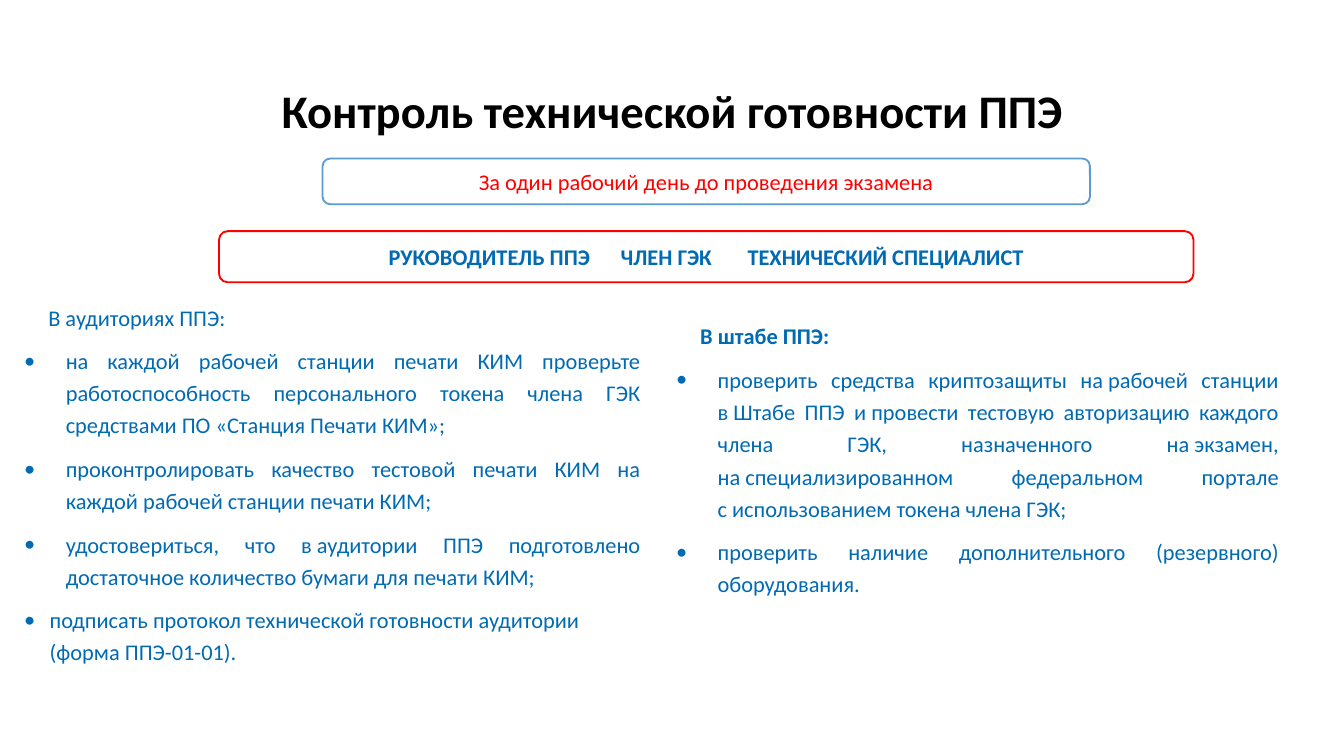
import pptx
import pptx.util
import pptx.dml.color
import pptx.enum.shapes
import pptx.enum.text
import lxml.etree

PX = 9144  # EMU per px, 100 px to the inch
FONT = "Calibri"
HARD = chr(160)  # no-break space, typed as ~ in the texts
HUES = {"ink": "000000", "blue": "006AB3", "red": "FF0000",
        "edge": "5B9BD5", "white": "FFFFFF"}
ALIGN = pptx.enum.text.PP_ALIGN
MID = pptx.enum.text.MSO_ANCHOR.MIDDLE
TOP = pptx.enum.text.MSO_ANCHOR.TOP


def hue(name):
    return pptx.dml.color.RGBColor.from_string(HUES[name])


def add(parent, tag, **attrs):
    return lxml.etree.SubElement(parent, pptx.oxml.ns.qn(tag), **attrs)


def mark(para, left=0, hang=0, dot=False, tab=None):
    """Set the indents, the bullet and the tab stop of a paragraph."""
    props = para._p.get_or_add_pPr()
    props.set("marL", str(left * PX))
    props.set("indent", str(hang * PX))
    if dot:
        add(props, "a:buFont", typeface=FONT)
        add(props, "a:buChar", char="•")
    if tab:
        stops = add(props, "a:tabLst")
        add(stops, "a:tab", pos=str(tab * PX), algn="l")


def write(frame, *parts, size=12, color="blue", bold=False,
          align=ALIGN.LEFT, line=1.0, after=0, **marks):
    """Add a paragraph; a number among the parts is a space so many
    hundredths of a point wider than usual."""
    para = frame.paragraphs[0]
    if para.runs:
        para = frame.add_paragraph()
    mark(para, **marks)
    para.alignment = align
    para.line_spacing = line
    para.space_after = pptx.util.Pt(after)
    for part in parts:
        run = para.add_run()
        if isinstance(part, int):
            run.text = " "
            run._r.get_or_add_rPr().set("spc", str(part))
        else:
            run.text = part.replace("~", HARD)
        font = run.font
        font.name, font.bold = FONT, bold
        font.size = pptx.util.Pt(size)
        font.color.rgb = hue(color)


def setup(frame, pads, anchor):
    frame.word_wrap = True
    frame.vertical_anchor = anchor
    (frame.margin_left, frame.margin_top,
     frame.margin_right, frame.margin_bottom) = [pad * PX for pad in pads]


def label(slide, box, pads, anchor=TOP):
    frame = slide.shapes.add_textbox(*[n * PX for n in box]).text_frame
    setup(frame, pads, anchor)
    return frame


def badge(slide, box, edge):
    kind = pptx.enum.shapes.MSO_SHAPE.ROUNDED_RECTANGLE
    shape = slide.shapes.add_shape(kind, *[n * PX for n in box])
    shape.shadow.inherit = False
    shape.fill.solid()
    shape.fill.fore_color.rgb = hue("white")
    shape.line.color.rgb = hue(edge)
    shape.line.width = pptx.util.Pt(1)
    setup(shape.text_frame, (10, 5, 10, 5), MID)
    return shape.text_frame


def title(slide, box):
    frame = label(slide, box, (7, 4, 7, 4), MID)
    write(frame, "Контроль технической готовности ППЭ", size=25,
          color="ink", bold=True, align=ALIGN.CENTER, line=0.9)


def term(slide, box):
    write(badge(slide, box, "edge"),
          "За один рабочий день до~проведения экзамена",
          color="red", align=ALIGN.CENTER)


def roles(slide, box):
    write(badge(slide, box, "red"), "РУКОВОДИТЕЛЬ ППЭ", 1360,
          "ЧЛЕН ГЭК", 1630, "ТЕХНИЧЕСКИЙ СПЕЦИАЛИСТ",
          bold=True, align=ALIGN.CENTER)


def duties(slide, box, pads, head, items, last=None, bold=False):
    """List justified items under a heading; last is set flush left."""
    frame = label(slide, box, pads)
    gaps = {"line": 1.2, "after": 6}
    write(frame, head, bold=bold, left=5, hang=13, **gaps)
    for item in items:
        write(frame, item, align=ALIGN.JUSTIFY, left=31, hang=-31,
              dot=True, tab=22, **gaps)
    if last:
        write(frame, last, left=19, hang=-19, dot=True, **gaps)


def main():
    deck = pptx.Presentation()
    deck.slide_width = 1000 * PX
    deck.slide_height = deck.slide_width * 9 // 16
    slide = deck.slides.add_slide(deck.slide_layouts[6])
    title(slide, (69, 30, 862, 109))
    duties(slide, (11, 218, 473, 252), (7, 4, 7, 4), "В аудиториях ППЭ:", [
        "на каждой рабочей станции печати КИМ проверьте работоспособность "
        "персонального токена члена ГЭК средствами ПО "
        "«Станция Печати КИМ»;",
        "проконтролировать качество тестовой печати КИМ на каждой рабочей "
        "станции печати КИМ;",
        "удостовериться, что в~аудитории ППЭ подготовлено достаточное "
        "количество бумаги для печати КИМ;",
    ], last="подписать протокол технической готовности аудитории "
            "(форма ППЭ-01-01).")
    roles(slide, (163, 172, 725, 38))
    term(slide, (240, 118, 571, 34))
    duties(slide, (484, 227, 487, 192), (19, 9, 19, 9), "В штабе ППЭ:", [
        "проверить средства криптозащиты на~рабочей станции в~Штабе ППЭ "
        "и~провести тестовую авторизацию каждого члена ГЭК, назначенного "
        "на~экзамен, на~специализированном федеральном портале "
        "с~использованием токена члена ГЭК;",
        "проверить наличие дополнительного (резервного) оборудования.",
    ], bold=True)
    deck.save("out.pptx")


if __name__ == "__main__":
    main()
